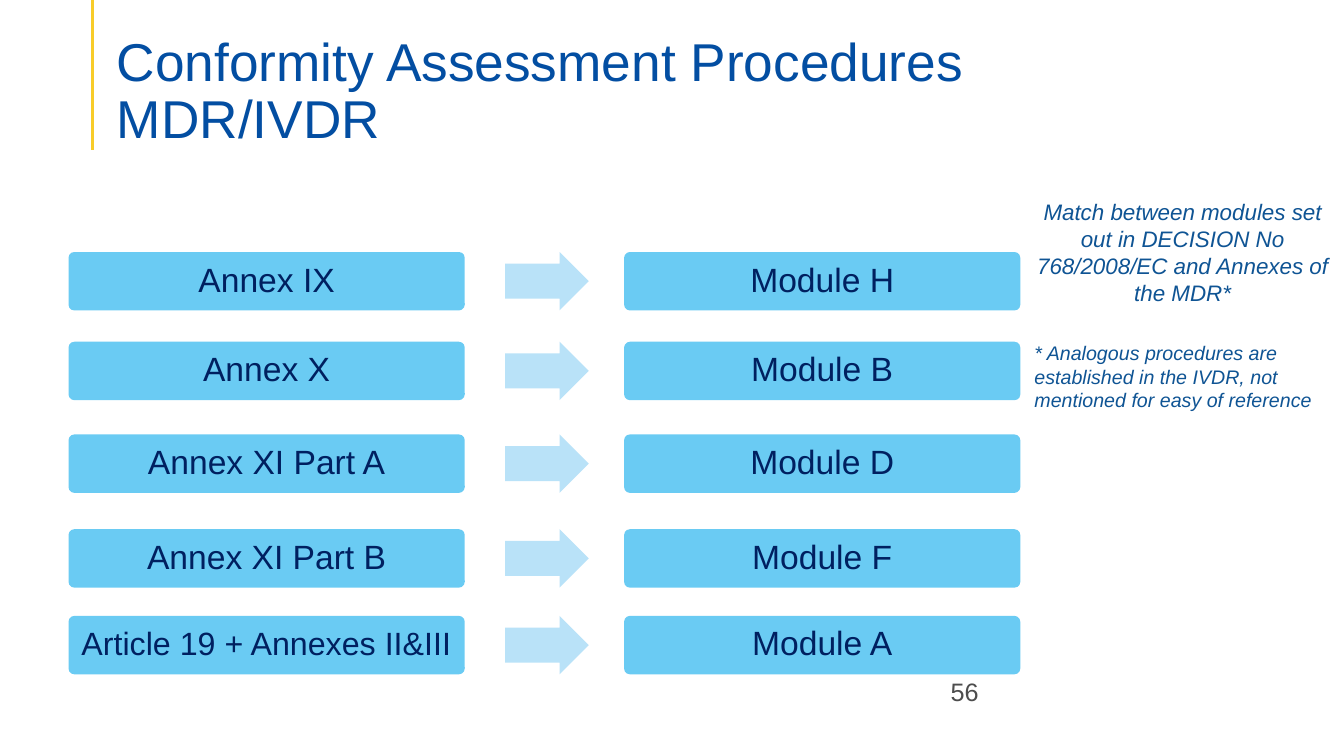
from lxml import etree
from pptx import Presentation
from pptx.dml.color import RGBColor
from pptx.enum.shapes import MSO_CONNECTOR, MSO_SHAPE
from pptx.enum.text import MSO_ANCHOR, MSO_AUTO_SIZE, PP_ALIGN
from pptx.oxml.ns import qn
from pptx.util import Inches, Pt

TITLE_BLUE = RGBColor(0x03, 0x4E, 0xA2)
NOTE_BLUE = RGBColor(0x0F, 0x54, 0x94)
NAVY = RGBColor(0x00, 0x20, 0x60)
BOX_BLUE = RGBColor(0x6A, 0xCB, 0xF3)
ARROW_BLUE = RGBColor(0xB9, 0xE2, 0xF8)
YELLOW = RGBColor(0xF8, 0xCC, 0x29)
GREY = RGBColor(0x4D, 0x4D, 0x4D)

CELL = Inches(0.1)
ROW_HEIGHT = 5.8
BOX_WIDTH = 39.3
ANNEX_LEFT, ARROW_LEFT, MODULE_LEFT = 6.8, 50.1, 61.9

# top, annex, annex text size, module
MATCHES = [
    (25, "Annex IX", 24, "Module H"),
    (33.9, "Annex X", 24, "Module B"),
    (43.1, "Annex XI Part A", 24, "Module D"),
    (52.5, "Annex XI Part B", 24, "Module F"),
    (61.1, "Article 19 + Annexes II&III", 23, "Module A"),
]


def grid(*cells):
    """Turn counts of grid columns and rows into slide lengths."""
    return [round(count * CELL) for count in cells]


def apply(target, values):
    for name, value in values.items():
        setattr(target, name, value)


class SlideBuilder:
    """Holds the shared font and the slide being built."""

    font_name = "Arial"

    def __init__(self, slide):
        self.slide = slide

    def fill_paragraph(self, paragraph, text, size, color, layout=None, italic=False):
        paragraph.text = text
        apply(paragraph, layout or {})
        apply(paragraph.font, {"name": self.font_name, "size": Pt(size), "italic": italic})
        paragraph.font.color.rgb = color

    def title(self, text, cells):
        title = self.slide.shapes.title
        apply(title, dict(zip(("left", "top", "width", "height"), grid(*cells))))
        apply(title.text_frame, {
            "auto_size": MSO_AUTO_SIZE.NONE, "word_wrap": True,
            "vertical_anchor": MSO_ANCHOR.BOTTOM, "margin_bottom": 0,
        })
        layout = {"alignment": PP_ALIGN.LEFT, "line_spacing": 0.9}
        self.fill_paragraph(title.text_frame.paragraphs[0], text, 38, TITLE_BLUE, layout)

    def rule(self, start, end):
        line = self.slide.shapes.add_connector(MSO_CONNECTOR.STRAIGHT, *grid(*start, *end))
        line.line.color.rgb = YELLOW
        line.line.width = Pt(2.25)
        etree.SubElement(line._element.spPr, qn("a:effectLst"))

    def shape(self, kind, cells, color, adjustments):
        shape = self.slide.shapes.add_shape(kind, *grid(*cells))
        shape.shadow.inherit = False
        shape.fill.solid()
        shape.fill.fore_color.rgb = color
        shape.line.fill.background()
        for index, value in enumerate(adjustments):
            shape.adjustments[index] = value
        return shape

    def box(self, left, top, text, size):
        cells = (left, top, BOX_WIDTH, ROW_HEIGHT)
        box = self.shape(MSO_SHAPE.ROUNDED_RECTANGLE, cells, BOX_BLUE, [0.1])
        apply(box.text_frame, {
            "word_wrap": True, "vertical_anchor": MSO_ANCHOR.MIDDLE,
            "margin_left": Inches(0.05), "margin_right": Inches(0.05),
        })
        layout = {"alignment": PP_ALIGN.CENTER, "line_spacing": 0.9}
        self.fill_paragraph(box.text_frame.paragraphs[0], text, size, NAVY, layout)

    def arrow(self, top):
        cells = (ARROW_LEFT, top, 8.3, ROW_HEIGHT)
        self.shape(MSO_SHAPE.RIGHT_ARROW, cells, ARROW_BLUE, [0.6, 0.5])

    def text_box(self, cells, margins=None):
        frame = self.slide.shapes.add_textbox(*grid(*cells)).text_frame
        apply(frame, {"word_wrap": True, **(margins or {})})
        return frame

    def page_number(self, number, cells):
        self.fill_paragraph(self.text_box(cells).paragraphs[0], number, 18, GREY)

    def side_note(self, statement, footnote, cells):
        frame = self.text_box(cells, {
            "margin_left": Inches(0.13), "margin_right": Inches(0.13),
            "margin_top": Inches(0.07), "margin_bottom": Inches(0.07),
        })
        self.fill_paragraph(frame.paragraphs[0], statement, 16, NOTE_BLUE,
                            {"alignment": PP_ALIGN.CENTER}, italic=True)
        self.fill_paragraph(frame.add_paragraph(), footnote, 14, NOTE_BLUE,
                            {"space_before": Pt(25)}, italic=True)


def main():
    presentation = Presentation()
    presentation.slide_width = Inches(13.33)
    presentation.slide_height = Inches(7.5)
    title_only = presentation.slide_layouts[5]
    builder = SlideBuilder(presentation.slides.add_slide(title_only))

    builder.rule((9.2, 0), (9.2, 14.9))
    builder.title("Conformity Assessment Procedures MDR/IVDR", (10.6, 6.3, 112.2, 8.6))
    builder.page_number("56", (93.3, 66.6, 33.3, 5.2))
    for top, annex, annex_size, module in MATCHES:
        builder.box(ANNEX_LEFT, top, annex, annex_size)
        builder.arrow(top)
        builder.box(MODULE_LEFT, top, module, 24)
    builder.side_note(
        "Match between modules set out in DECISION No 768/2008/EC and Annexes of the MDR*",
        "* Analogous procedures are established in the IVDR, not mentioned for easy of reference",
        (101.3, 19, 32, 17.5),
    )
    presentation.save("out.pptx")


if __name__ == "__main__":
    main()
